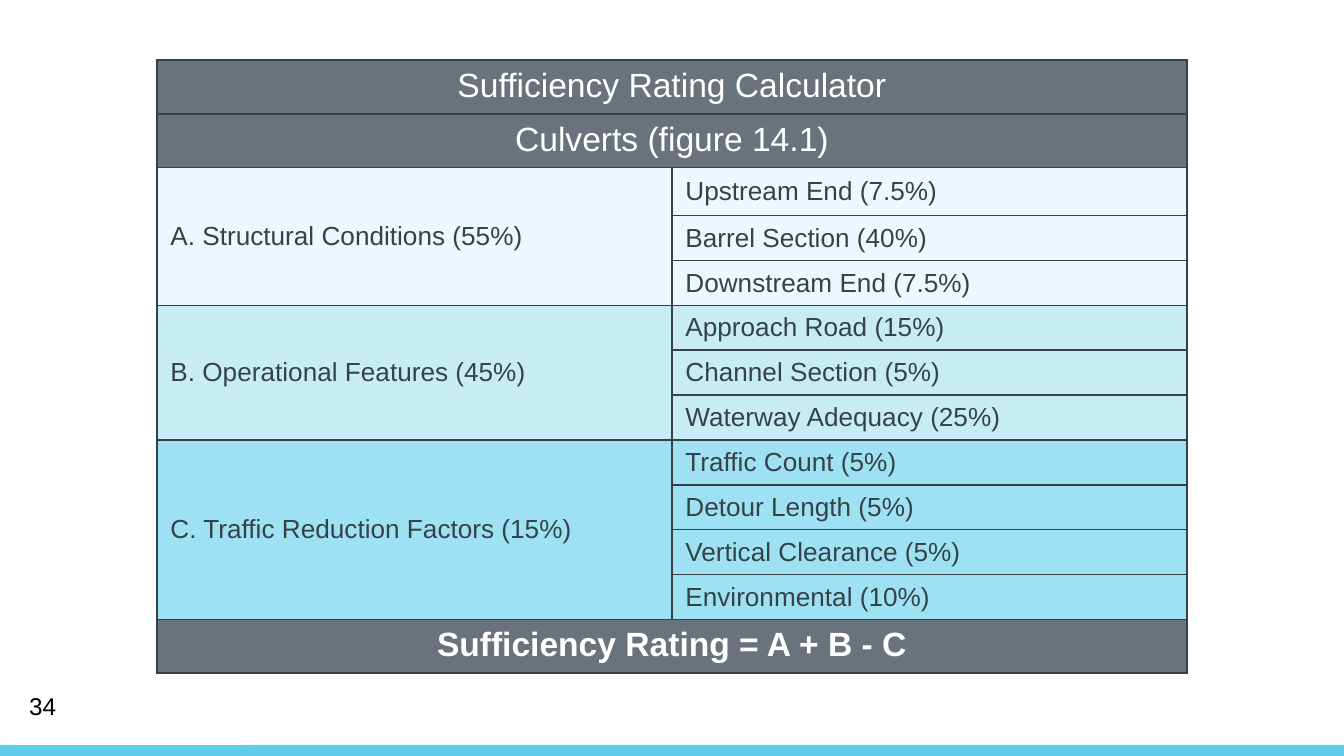
"""Build the culvert sufficiency rating slide."""
from pptx import Presentation
from pptx import util as u
from pptx.dml.color import RGBColor
from pptx.enum import shapes, text
from pptx.oxml import parse_xml

WHITE = RGBColor(0xFF, 0xFF, 0xFF)
BLACK = RGBColor(0x00, 0x00, 0x00)
SLATE = RGBColor(0x6A, 0x73, 0x7B)
INK = RGBColor(0x36, 0x42, 0x4A)
SKY = RGBColor(0x5F, 0xCE, 0xEA)
PALE = RGBColor(0xEC, 0xF8, 0xFB)
LIGHT = RGBColor(0xC8, 0xEC, 0xF5)
MEDIUM = RGBColor(0x9D, 0xE1, 0xF2)

HEADINGS = ["Sufficiency Rating Calculator", "Culverts (figure 14.1)"]
SECTIONS = [
    ("A. Structural Conditions (55%)", PALE,
     ["Upstream End (7.5%)", "Barrel Section (40%)", "Downstream End (7.5%)"]),
    ("B. Operational Features (45%)", LIGHT,
     ["Approach Road (15%)", "Channel Section (5%)", "Waterway Adequacy (25%)"]),
    ("C. Traffic Reduction Factors (15%)", MEDIUM,
     ["Traffic Count (5%)", "Detour Length (5%)", "Vertical Clearance (5%)",
      "Environmental (10%)"]),
]
FORMULA = "Sufficiency Rating = A + B - C"
PAGE_NUMBER = "34"

BARS = [((0, 745, 1344, 11), SKY), ((16, 728, 231, 17), WHITE)]
NUMBER_BOX = (16, 685, 302, 41)
TABLE_BOX = (157, 60, 1030, 608)
BAND_HEIGHT, FIRST_ITEM_HEIGHT = 53, 48
DRAWING_NS = "http://schemas.openxmlformats.org/drawingml/2006/main"


def px(length):
    """Convert pixels to EMU."""
    return u.Emu(round(length * 914400 / 134.4))


def write(frame, content, size=14, color=INK, bold=False, align=text.PP_ALIGN.LEFT):
    """Put one formatted paragraph in a text frame."""
    paragraph = frame.paragraphs[0]
    paragraph.alignment = align
    run = paragraph.add_run()
    run.text = content
    run.font.name = "Arial"
    run.font.size = u.Pt(size)
    run.font.bold = bold
    run.font.color.rgb = color


def style_cell(cell, fill):
    """Fill a cell and draw its four borders."""
    properties = cell._tc.get_or_add_tcPr()
    for side in ("lnL", "lnR", "lnT", "lnB"):
        properties.append(parse_xml(
            f'<a:{side} xmlns:a="{DRAWING_NS}" w="12700"><a:solidFill>'
            f'<a:srgbClr val="{INK}"/></a:solidFill></a:{side}>'))
    cell.fill.solid()
    cell.fill.fore_color.rgb = fill


def add_band(table, row, content, bold=False):
    """Write a full-width dark row."""
    for cell in table.rows[row].cells:
        style_cell(cell, SLATE)
    table.cell(row, 0).merge(table.cell(row, 1))
    write(table.cell(row, 0).text_frame, content, size=18, color=WHITE, bold=bold,
          align=text.PP_ALIGN.CENTER)


def add_section(table, first, title, fill, items):
    """Write a section title beside its items."""
    for row, item in enumerate(items, first):
        for cell in table.rows[row].cells:
            style_cell(cell, fill)
            cell.vertical_anchor = text.MSO_ANCHOR.MIDDLE
        write(table.cell(row, 1).text_frame, item)
    table.cell(first, 0).merge(table.cell(first + len(items) - 1, 0))
    write(table.cell(first, 0).text_frame, title)


def add_rating_table(slide):
    """Add the rating table."""
    item_count = sum(len(items) for _, _, items in SECTIONS)
    band_count = len(HEADINGS) + 1
    item_height = (TABLE_BOX[3] - band_count * BAND_HEIGHT
                   - FIRST_ITEM_HEIGHT) / (item_count - 1)
    heights = ([BAND_HEIGHT] * len(HEADINGS) + [FIRST_ITEM_HEIGHT]
               + [item_height] * (item_count - 1) + [BAND_HEIGHT])
    table = slide.shapes.add_table(len(heights), 2, *map(px, TABLE_BOX)).table
    table.horz_banding = False
    table.first_row = False
    for row, height in zip(table.rows, heights):
        row.height = px(height)
    for row, heading in enumerate(HEADINGS):
        add_band(table, row, heading)
    first = len(HEADINGS)
    for title, fill, items in SECTIONS:
        add_section(table, first, title, fill, items)
        first += len(items)
    add_band(table, first, FORMULA, bold=True)


def main():
    """Build and save the presentation."""
    presentation = Presentation()
    presentation.slide_width, presentation.slide_height = px(1344), px(756)
    slide = presentation.slides.add_slide(presentation.slide_layouts[6])
    for box, color in BARS:
        bar = slide.shapes.add_shape(shapes.MSO_SHAPE.RECTANGLE, *map(px, box))
        bar.shadow.inherit = False
        bar.fill.solid()
        bar.fill.fore_color.rgb = color
        bar.line.fill.background()
    frame = slide.shapes.add_textbox(*map(px, NUMBER_BOX)).text_frame
    frame.word_wrap = True
    frame.vertical_anchor = text.MSO_ANCHOR.MIDDLE
    write(frame, PAGE_NUMBER, size=13, color=BLACK)
    add_rating_table(slide)
    presentation.save("out.pptx")


if __name__ == "__main__":
    main()
